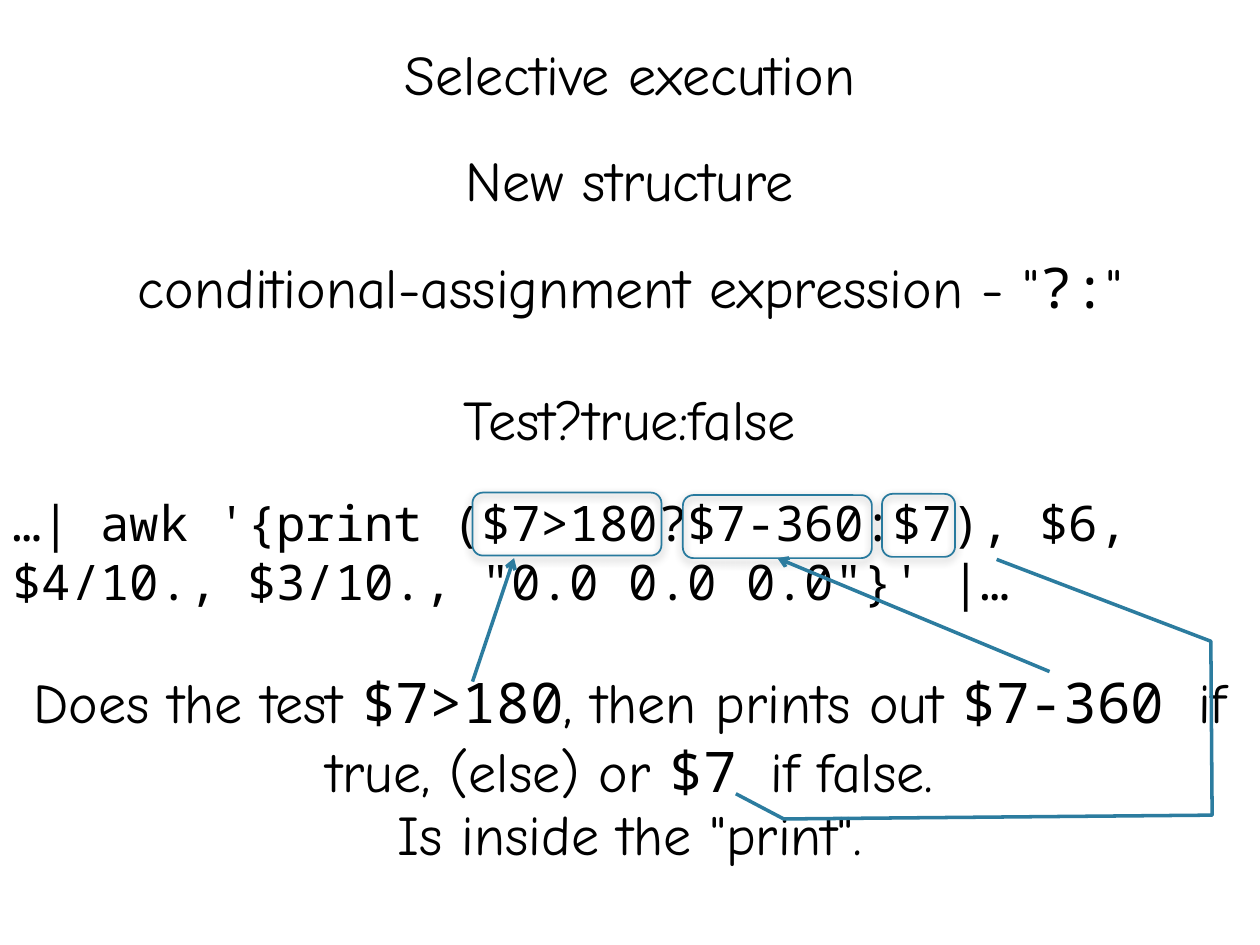
from dataclasses import dataclass

from lxml.etree import SubElement
from pptx import Presentation
from pptx.dml.color import RGBColor
from pptx.enum.shapes import MSO_CONNECTOR, MSO_SHAPE
from pptx.enum.text import MSO_ANCHOR, PP_ALIGN
from pptx.oxml.ns import qn
from pptx.util import Inches, Pt


@dataclass(frozen=True)
class Theme:
    text_font: str = "Comic Neue"
    code_font: str = "Noto Sans Mono"
    text_size: int = 32
    code_size: int = 28
    ink: str = "000000"
    box_line: str = "287A9E"
    arrow_line: str = "2C7C9F"


theme = Theme()


def style_line(line, color, width):
    line.color.rgb = RGBColor.from_string(color)
    line.width = Pt(width)


presentation = Presentation()
presentation.slide_width = Inches(10)
presentation.slide_height = Inches(7.5)
slide = presentation.slides.add_slide(presentation.slide_layouts[6])

# Text: each paragraph has alignment, size, line height, space before, runs
text, code = theme.text_font, theme.code_font
center, left = PP_ALIGN.CENTER, PP_ALIGN.LEFT
paragraphs = [
    (center, theme.text_size, 36, 0, [("Selective execution", text)]),
    (center, theme.text_size, 36, 24.2, [("New structure", text)]),
    (center, theme.text_size, 36, 25.4, [
        ('conditional-assignment expression - "', text), ("?:", code), ('"', text)]),
    (center, theme.text_size, 36, 39.2, [("Test?true:false", text)]),
    (left, theme.code_size, 34, 22.8, [
        ("…| awk '{print ($7>180?$7-360:$7), $6, $4/10., $3/10., "
         "\"0.0 0.0 0.0\"}' |…", code)]),
    (center, theme.text_size, 39.4, 31.5, [
        ("Does the test ", text), ("$7>180", code), (", then prints out ", text),
        ("$7-360 ", code), ("if true, (else) or ", text), ("$7 ", code),
        ("if false.", text)]),
    (center, theme.text_size, 36.3, 0, [('Is inside the "print".', text)]),
]
body = slide.shapes.add_textbox(Inches(0), Inches(0.25), Inches(10), Inches(5.75))
frame = body.text_frame
frame.word_wrap = True
frame.vertical_anchor = MSO_ANCHOR.TOP
frame.margin_top = Inches(0.1)
for index, (alignment, size, height, before, runs) in enumerate(paragraphs):
    paragraph = frame.add_paragraph() if index else frame.paragraphs[0]
    paragraph.alignment = alignment
    paragraph.line_spacing = Pt(height)
    paragraph.space_before = Pt(before)
    for words, font_name in runs:
        run = paragraph.add_run()
        run.text = words
        run.font.name = font_name
        run.font.size = Pt(size)
        run.font.color.rgb = RGBColor.from_string(theme.ink)

# Boxes around the test, the true value and the false value
for x, y, width in [(3.75, 3.91, 1.5), (5.42, 3.93, 1.5), (7, 3.92, 0.58)]:
    box = slide.shapes.add_shape(
        MSO_SHAPE.ROUNDED_RECTANGLE, Inches(x), Inches(y), Inches(width), Inches(0.5))
    box.fill.background()
    style_line(box.line, theme.box_line, 1)
    box.shadow.inherit = False
    effects = box._element.spPr.find(qn("a:effectLst"))
    shadow = SubElement(effects, qn("a:outerShdw"), blurRad=str(Pt(5)),
                        dist=str(Pt(2)), dir="5400000", rotWithShape="0")
    shadow_color = SubElement(shadow, qn("a:srgbClr"), val=theme.ink)
    SubElement(shadow_color, qn("a:alpha"), val="40000")

# Arrows from the explanation to the boxes
for start_x, start_y, end_x, end_y in [(3.75, 5.41, 4.08, 4.43), (8.33, 5.33, 6.17, 4.43)]:
    arrow = slide.shapes.add_connector(
        MSO_CONNECTOR.STRAIGHT, Inches(start_x), Inches(start_y),
        Inches(end_x), Inches(end_y))
    style_line(arrow.line, theme.arrow_line, 2)
    SubElement(arrow.line._get_or_add_ln(), qn("a:tailEnd"), type="arrow")
    SubElement(arrow._element.spPr, qn("a:effectLst"))

# Bent line that leads around the text to the false value
points = [(Inches(x), Inches(y)) for x, y in
          [(7.91, 4.44), (9.61, 5.09), (9.62, 6.47), (6.22, 6.5), (5.84, 6.3)]]
builder = slide.shapes.build_freeform(*points[0])
builder.add_line_segments(points[1:], close=False)
bent_line = builder.convert_to_shape()
bent_line.fill.background()
style_line(bent_line.line, theme.arrow_line, 2)
bent_line.shadow.inherit = False

presentation.save("out.pptx")
